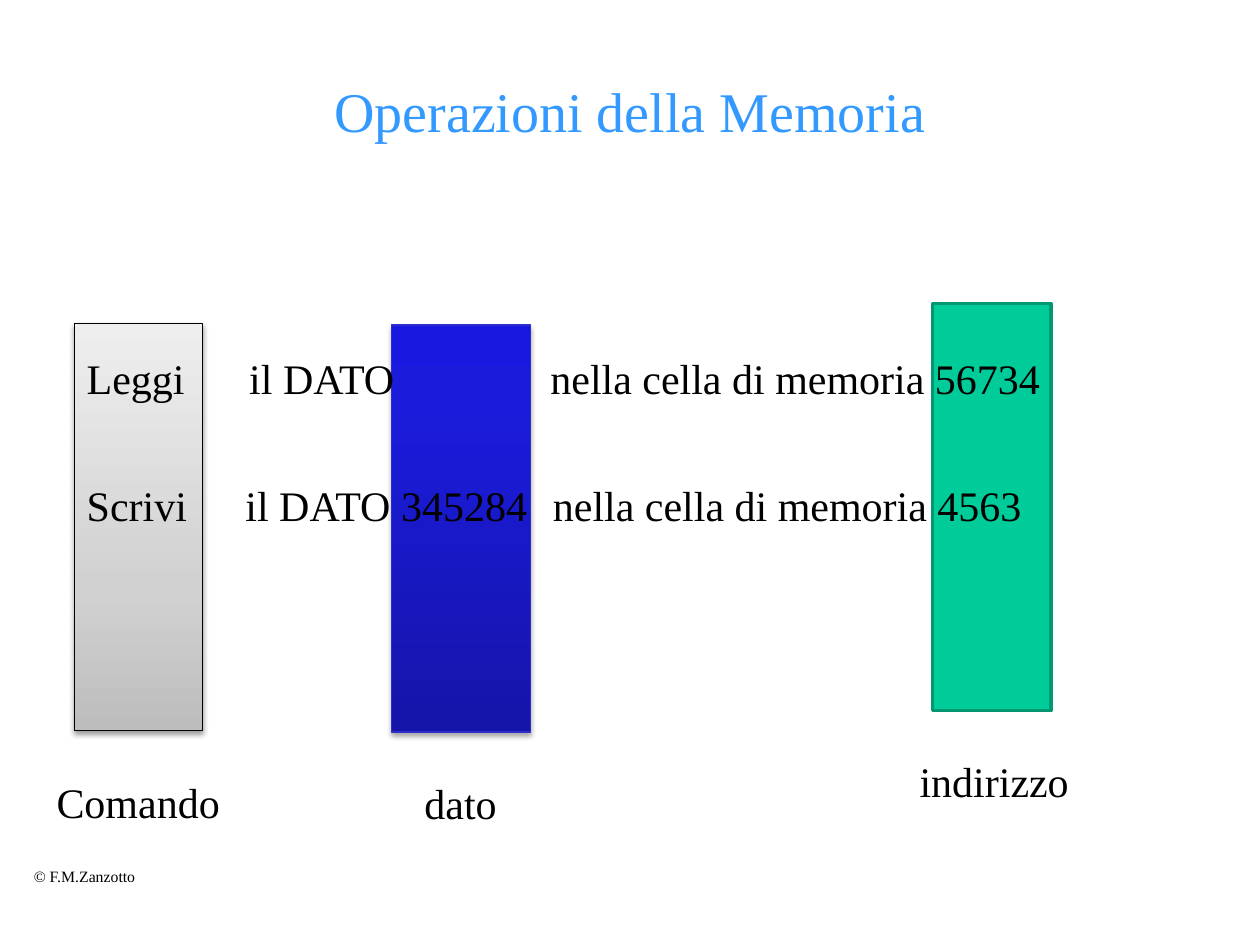
from copy import deepcopy
from dataclasses import dataclass

from lxml import etree
from pptx import Presentation
from pptx.dml.color import RGBColor
from pptx.enum.shapes import MSO_SHAPE
from pptx.enum.text import MSO_ANCHOR, MSO_AUTO_SIZE, PP_ALIGN
from pptx.oxml import parse_xml
from pptx.oxml.ns import qn
from pptx.util import Pt

RECTANGLE = MSO_SHAPE.RECTANGLE
MIDDLE = MSO_ANCHOR.MIDDLE
CENTER = PP_ALIGN.CENTER
FIT_SHAPE = MSO_AUTO_SIZE.SHAPE_TO_FIT_TEXT
TITLE_ONLY = 5
PX = 9144
DRAWING = "http://schemas.openxmlformats.org/drawingml/2006/main"


@dataclass(frozen=True)
class Theme:
    font: str = "Times New Roman"
    text: str = "000000"
    title: str = "3399FF"
    title_size: int = 32
    body_size: int = 24
    footer_size: int = 9
    command_fill: tuple = ((0, "BDBDBD"), (35, "D1D1D1"), (100, "EEEEEE"))
    command_line: str = "000000"
    data_fill: tuple = ((0, "1515A9"), (80, "1B1BDC"), (100, "1818E1"))
    data_line: str = "2E2ECB"
    address_fill: tuple = ((0, "00CC99"),)
    address_line: str = "009771"


THEME = Theme()


def place(shape, box):
    for name, value in zip(("left", "top", "width", "height"), box):
        setattr(shape, name, value * PX)


def style_font(paragraph, size, color):
    for name, value in {"name": THEME.font, "size": Pt(size), "bold": False}.items():
        setattr(paragraph.font, name, value)
    paragraph.font.color.rgb = RGBColor.from_string(color)


def add_label(slide, box, text, size=THEME.body_size):
    shape = slide.shapes.add_textbox(*(value * PX for value in box))
    frame = shape.text_frame
    frame.text = text
    for name, value in {"word_wrap": False, "auto_size": FIT_SHAPE}.items():
        setattr(frame, name, value)
    style_font(frame.paragraphs[0], size, THEME.text)


def add_title(slide, box, text):
    title = slide.shapes.title
    place(title, box)
    frame = title.text_frame
    frame.text = text
    frame.vertical_anchor = MIDDLE
    paragraph = frame.paragraphs[0]
    paragraph.alignment = CENTER
    style_font(paragraph, THEME.title_size, THEME.title)


def fill_gradient(shape, stops):
    shape.fill.gradient()
    shape.fill.gradient_angle = 90
    stop_list = shape._element.spPr.find(".//" + qn("a:gsLst"))
    while len(stop_list) < len(stops):
        stop_list.append(deepcopy(stop_list[0]))
    for stop, (position, color) in zip(shape.fill.gradient_stops, stops):
        stop.position = position / 100
        stop.color.rgb = RGBColor.from_string(color)


def add_shadow(shape, opacity, distance):
    effects = shape._element.spPr.find(qn("a:effectLst"))
    effects.append(parse_xml(
        f'<a:outerShdw xmlns:a="{DRAWING}" blurRad="{Pt(3.1)}" dist="{Pt(distance)}" '
        'dir="5400000" rotWithShape="0"><a:srgbClr val="000000"/></a:outerShdw>'))
    alpha = etree.SubElement(effects[0][0], qn("a:alpha"))
    alpha.set("val", str(opacity * 1000))


def add_column(slide, box, fill, line, line_width, shadow, caption, offset, caption_width):
    left, top, width, height = box
    shape = slide.shapes.add_shape(RECTANGLE, *(value * PX for value in box))
    shape.shadow.inherit = False
    if len(fill) > 1:
        fill_gradient(shape, fill)
    else:
        shape.fill.solid()
        shape.fill.fore_color.rgb = RGBColor.from_string(fill[0][1])
    shape.line.color.rgb = RGBColor.from_string(line)
    shape.line.width = Pt(line_width)
    if shadow:
        add_shadow(shape, *shadow)
    add_label(slide, (left + offset, top + height + 31, caption_width, 50), caption)


def add_instruction(slide, box, parts):
    left, top, _, height = box
    for offset, width, text in parts:
        add_label(slide, (left + offset, top, width, height), text)


def main():
    presentation = Presentation()
    presentation.slide_width = 1000 * PX
    presentation.slide_height = 750 * PX
    slide = presentation.slides.add_slide(presentation.slide_layouts[TITLE_ONLY])

    add_label(slide, (17, 683, 102, 25), "© F.M.Zanzotto", THEME.footer_size)
    add_title(slide, (75, 50, 850, 75), "Operazioni della Memoria")

    columns = (
        ((311, 258, 110, 323), THEME.data_fill, THEME.data_line, 0.75, (35, 1.8),
         "dato", 16, 78),
        ((59, 257, 102, 323), THEME.command_fill, THEME.command_line, 0.75, (38, 1.6),
         "Comando", -24, 151),
        ((740, 241, 94, 323), THEME.address_fill, THEME.address_line, 2, None,
         "indirizzo", -20, 140),
    )
    for column in columns:
        add_column(slide, *column)

    instructions = (
        (275, ((0, 107, "Leggi"), (129, 147, "il DATO"),
               (368, 412, "nella cella di memoria 56734"))),
        (376, ((0, 100, "Scrivi"), (126, 246, "il DATO 345284"),
               (370, 395, "nella cella di memoria 4563"))),
    )
    for top, parts in instructions:
        add_instruction(slide, (59, top, 780, 50), parts)

    presentation.save("out.pptx")


if __name__ == "__main__":
    main()
